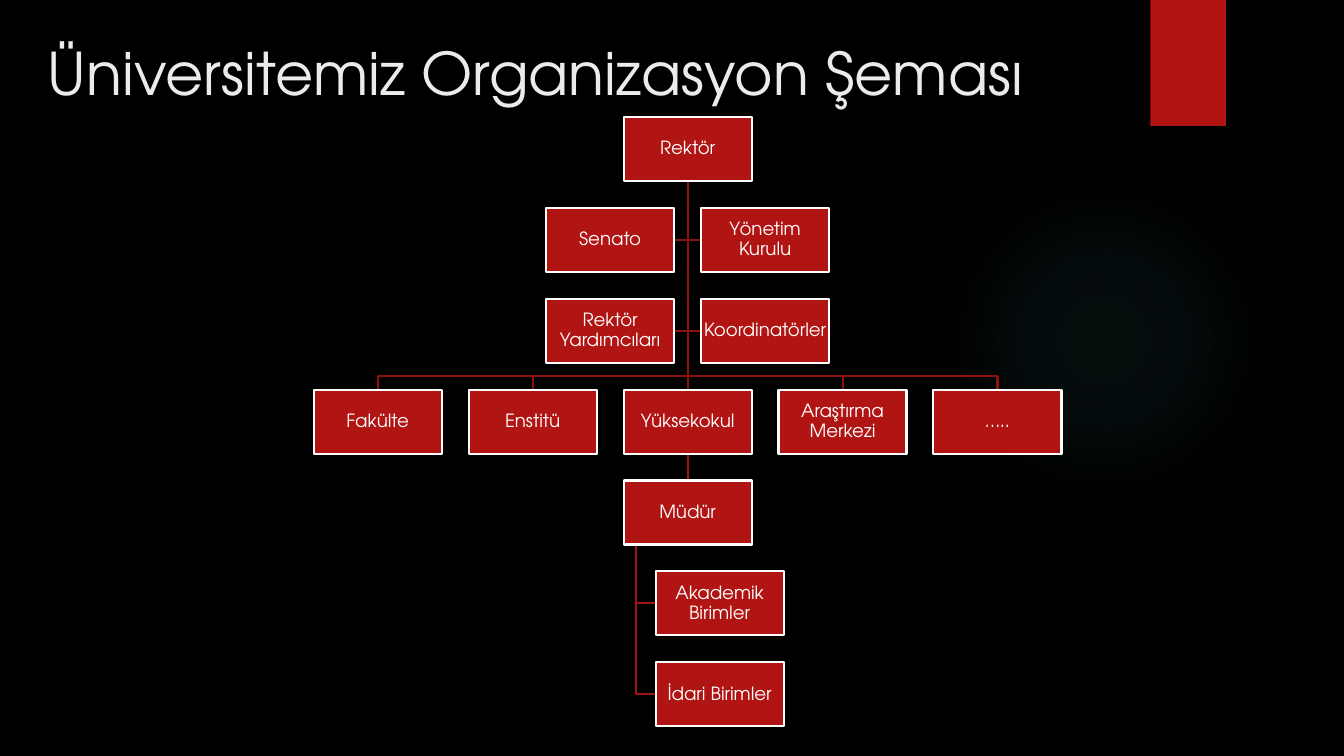
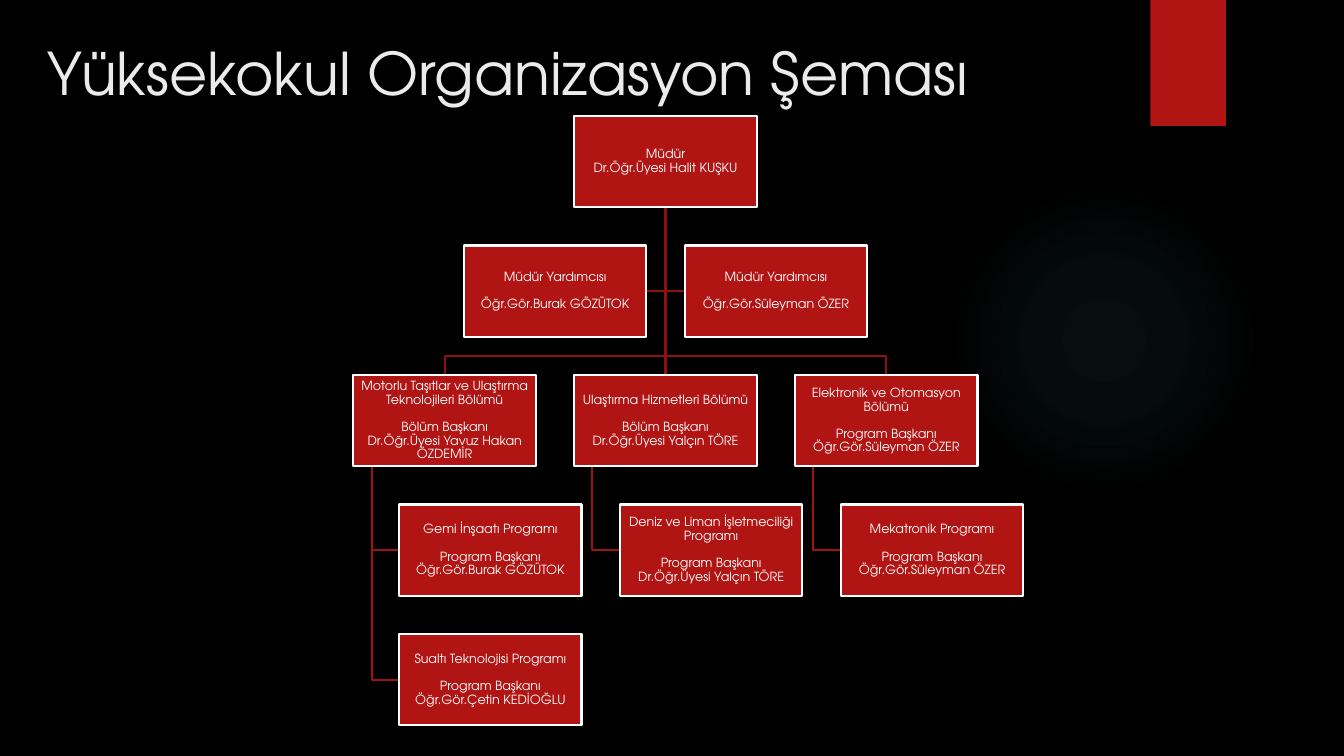
from lxml import etree
from pptx import Presentation
from pptx.dml.color import RGBColor
from pptx.enum.shapes import MSO_CONNECTOR, MSO_SHAPE
from pptx.enum.text import MSO_ANCHOR, MSO_AUTO_SIZE, PP_ALIGN
from pptx.oxml import parse_xml
from pptx.oxml.ns import nsdecls, qn
from pptx.util import Inches, Pt

RECT, OVAL = MSO_SHAPE.RECTANGLE, MSO_SHAPE.OVAL
STRAIGHT = MSO_CONNECTOR.STRAIGHT
CENTER, LEFT = PP_ALIGN.CENTER, PP_ALIGN.LEFT
MIDDLE, TOP = MSO_ANCHOR.MIDDLE, MSO_ANCHOR.TOP
NO_FIT = MSO_AUTO_SIZE.NONE

FONT = "TeX Gyre Adventor"
BLACK, WHITE, TITLE = "000000", "FFFFFF", "EBEBEB"
RED, TRUNK, BRANCH, GLOW = "B01513", "8D110F", "A01311", "50B9C1"
LINE_WIDTH = Pt(1.5)
TITLE_BOX = (0.37, 0.31, 10.28, 1.53)

UNIVERSITY = {
    "root": "Rektör",
    "aides": [("Senato", "Yönetim Kurulu"),
              ("Rektör Yardımcıları", "Koordinatörler")],
    "units": [("Fakülte", [], []), ("Enstitü", [], []),
              ("Yüksekokul", ["Müdür"], ["Akademik Birimler", "İdari Birimler"]),
              ("Araştırma Merkezi", [], []), ("…..", [], [])],
}
SCHOOL = {
    "root": "Müdür\vDr.Öğr.Üyesi Halit KUŞKU",
    "aides": [("Müdür Yardımcısı\nÖğr.Gör.Burak GÖZÜTOK",
               "Müdür Yardımcısı\nÖğr.Gör.Süleyman ÖZER")],
    "units": [
        ("Motorlu Taşıtlar ve Ulaştırma Teknolojileri Bölümü\n"
         "Bölüm Başkanı\vDr.Öğr.Üyesi Yavuz Hakan ÖZDEMİR", [],
         ["Gemi İnşaatı Programı\nProgram Başkanı\vÖğr.Gör.Burak GÖZÜTOK",
          "Sualtı Teknolojisi Programı\nProgram Başkanı\vÖğr.Gör.Çetin KEDİOĞLU"]),
        ("Ulaştırma Hizmetleri Bölümü\nBölüm Başkanı\vDr.Öğr.Üyesi Yalçın TÖRE", [],
         ["Deniz ve Liman İşletmeciliği Programı\n"
          "Program Başkanı\vDr.Öğr.Üyesi Yalçın TÖRE"]),
        ("Elektronik ve Otomasyon Bölümü\nProgram Başkanı\vÖğr.Gör.Süleyman ÖZER", [],
         ["Mekatronik Programı\nProgram Başkanı\vÖğr.Gör.Süleyman ÖZER"]),
    ],
}


def rgb(color):
    return RGBColor.from_string(color)


def add_box(slide, kind, box, color):
    sp = slide.shapes.add_shape(kind, *map(Inches, box))
    sp.shadow.inherit = False
    sp.fill.solid()
    sp.fill.fore_color.rgb = rgb(color)
    sp.line.fill.background()
    return sp


def style_layout(layout, slide):
    fill = layout.background.fill
    fill.solid()
    fill.fore_color.rgb = rgb(BLACK)

    glow = add_box(slide, OVAL, (9.41, 1.83, 3.08, 3.08), GLOW)
    stops = "".join(
        f'<a:gs pos="{pos}000"><a:srgbClr val="{GLOW}">'
        f'<a:alpha val="{alpha}000"/></a:srgbClr></a:gs>'
        for pos, alpha in ((0, 7), (36, 6), (69, 0)))
    grad = parse_xml(
        f'<a:gradFill {nsdecls("a")} rotWithShape="1"><a:gsLst>{stops}</a:gsLst>'
        '<a:path path="circle"><a:fillToRect l="50000" t="50000" r="50000" b="50000"/>'
        '</a:path></a:gradFill>')
    spPr = glow.element.spPr
    spPr.replace(spPr.find(qn("a:solidFill")), grad)

    tab = add_box(slide, RECT, (11.41, 0, 0.75, 1.25), RED)
    effects = tab.element.spPr.find(qn("a:effectLst"))
    effects.append(parse_xml(
        f'<a:outerShdw {nsdecls("a")} blurRad="{Pt(3)}" dist="{Pt(2)}" dir="5400000">'
        f'<a:srgbClr val="{BLACK}"><a:alpha val="45000"/></a:srgbClr></a:outerShdw>'))

    for i, sp in enumerate((glow, tab)):
        sp.element.nvSpPr.cNvPr.set("id", str(100 + i))
        layout.shapes.element.insert(2 + i, sp.element)


def set_title(slide, text):
    sp = slide.shapes.title
    sp.left, sp.top, sp.width, sp.height = map(Inches, TITLE_BOX)
    tf = sp.text_frame
    tf.text = text
    tf.word_wrap = True
    tf.auto_size = NO_FIT
    tf.vertical_anchor = TOP
    p = tf.paragraphs[0]
    p.alignment = LEFT
    font = p.runs[0].font
    font.name, font.size = FONT, Pt(42)
    font.color.rgb = rgb(TITLE)


def add_node(slide, box, text, size):
    sp = add_box(slide, RECT, box, RED)
    sp.line.color.rgb = rgb(WHITE)
    sp.line.width = LINE_WIDTH
    tf = sp.text_frame
    tf.text = text
    tf.word_wrap = True
    tf.vertical_anchor = MIDDLE
    tf.margin_left = tf.margin_right = Inches(0.01)
    tf.margin_top = tf.margin_bottom = Inches(0.01)
    for i, p in enumerate(tf.paragraphs):
        p.alignment = CENTER
        p.line_spacing = 0.9
        if i:
            p.space_before = Pt(size * 1.08)
        for r in p.runs:
            r.font.name, r.font.size = FONT, Pt(size)
            r.font.color.rgb = rgb(WHITE)


def add_link(slide, points, color):
    pts = [(Inches(x), Inches(y)) for x, y in points]
    if len(pts) == 2:
        sp = slide.shapes.add_connector(STRAIGHT, *pts[0], *pts[1])
        etree.SubElement(sp.element.spPr, qn("a:effectLst"))
    else:
        builder = slide.shapes.build_freeform(*pts[0])
        builder.add_line_segments(pts[1:], close=False)
        sp = builder.convert_to_shape()
        sp.fill.background()
        sp.shadow.inherit = False
    sp.line.color.rgb = rgb(color)
    sp.line.width = LINE_WIDTH


def org_chart(slide, cx, top, w, size, root, aides, units):
    h, gap = w / 2, w * 0.21
    col, row = w + gap, h + gap
    nodes, links = [(cx, top, root)], []
    start = (cx, top + h)

    for i, pair in enumerate(aides, 1):
        y = top + i * row
        for side, text in zip((-1, 1), pair):
            nodes.append((cx + side * col / 2, y, text))
            links.append(([start, (cx, y + h / 2),
                           (cx + side * gap / 2, y + h / 2)], TRUNK))

    unit_top = top + (len(aides) + 1) * row
    for i, (text, heirs, members) in enumerate(units):
        x, y = cx + (i - (len(units) - 1) / 2) * col, unit_top
        nodes.append((x, y, text))
        bend = y - gap / 2
        elbow = [(cx, bend), (x, bend)] if x != cx else []
        links.append(([start, *elbow, (x, y)], TRUNK))
        for heir in heirs:
            links.append(([(x, y + h), (x, y + row)], BRANCH))
            y += row
            nodes.append((x, y, heir))
        stem = x - w * 0.4
        for j, member in enumerate(members, 1):
            member_top = y + j * row
            mid = member_top + h / 2
            nodes.append((x + w / 4, member_top, member))
            links.append(([(stem, y + h), (stem, mid), (x - w / 4, mid)], BRANCH))

    for points, color in links:
        add_link(slide, points, color)
    for x, y, text in nodes:
        add_node(slide, (x - w / 2, y, w, h), text, size)


def main():
    prs = Presentation()
    prs.slide_width, prs.slide_height = Inches(13.33), Inches(7.5)
    layout = prs.slide_layouts[5]
    university = prs.slides.add_slide(layout)
    school = prs.slides.add_slide(layout)
    style_layout(layout, university)

    set_title(university, "Üniversitemiz Organizasyon Şeması")
    org_chart(university, 6.82, 1.16, 1.27, 13, **UNIVERSITY)

    set_title(school, "Yüksekokul Organizasyon Şeması")
    org_chart(school, 6.6, 1.15, 1.81, 9, **SCHOOL)
    prs.save("out.pptx")


if __name__ == "__main__":
    main()
